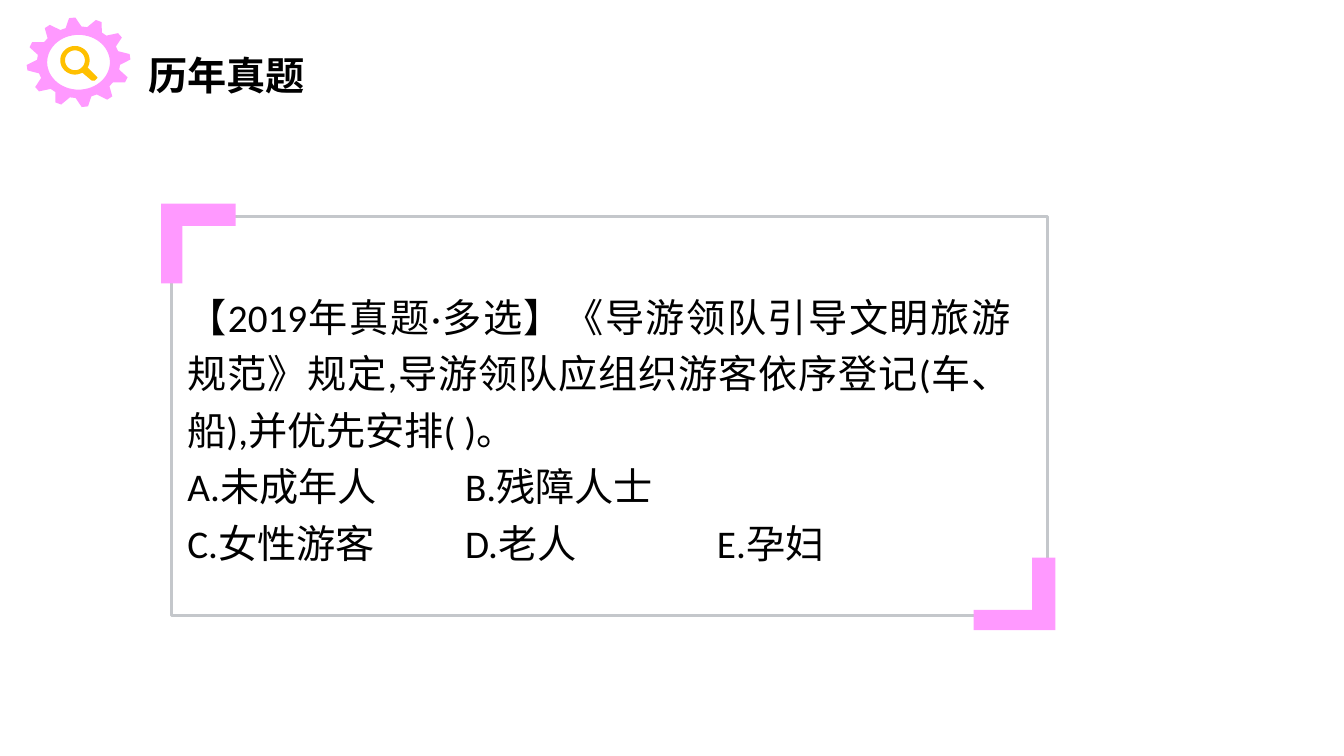
from math import cos, radians, sin

from lxml import etree
from pptx import Presentation
from pptx.dml.color import RGBColor
from pptx.enum.shapes import MSO_SHAPE
from pptx.enum.text import MSO_ANCHOR, PP_ALIGN
from pptx.oxml.ns import qn
from pptx.util import Cm, Pt

PINK = RGBColor(0xFF, 0x99, 0xFF)
AMBER = RGBColor(0xFF, 0xC0, 0x00)
GREY = RGBColor(0xC4, 0xC7, 0xCB)
WHITE = RGBColor(0xFF, 0xFF, 0xFF)
BLACK = RGBColor(0x00, 0x00, 0x00)
LATIN, CJK = "Calibri", "Noto Sans CJK SC"

TITLE = "历年真题"
QUESTION = [
    "【2019年真题·多选】《导游领队引导文眀旅游规范》规定,导游领队应组织游客依序登记(车、船),并优先安排( )。",
    "A.未成年人\tB.残障人士",
    "C.女性游客\tD.老人\tE.孕妇",
]
OPTION_TABS = (7, 13.35)

# Lengths in centimetres: left, top, width, height
TITLE_BOX = (3.73, 1.08, 5.92, 1.63)
FRAME = (4.32, 5.45, 22.07, 10.06)
QUESTION_BOX = (4.72, 7.15, 20.75, 7.19)
# Outer corner, far ends, inner corner
BRACKETS = [
    ((4.06, 5.13), (5.94, 7.14), (4.6, 5.69)),
    ((26.6, 15.88), (24.54, 14.05), (26.01, 15.37)),
]
GEAR_CENTRE, GEAR_RADII, GEAR_HOLE = (1.98, 1.57), (1.31, 1.13), (0.79, 0.69)
TEETH, FIRST_TOOTH = 12, -97
TOOTH = [(-11, 0.8), (-3.5, 1), (3.5, 1), (11, 0.8)]  # angle offset, radius share
LENS_CENTRE, LENS_RADII, LENS_HOLE = (1.89, 1.52), (0.37, 0.36), (0.25, 0.25)
HANDLE = [(2.31, 2.03), (2.39, 2.03), (2.46, 1.96), (2.44, 1.93)]


def box(lengths):
    return [Cm(v) for v in lengths]


def on_ellipse(centre, radii, angle, share=1):
    a = radians(angle)
    return (centre[0] + radii[0] * share * cos(a),
            centre[1] + radii[1] * share * sin(a))


def ellipse(centre, radii):
    return [on_ellipse(centre, radii, a) for a in range(0, 360, 6)]


def add_outline(slide, colour, *contours):
    """Fill one freeform; later contours cut holes in the first."""
    first, *holes = [[box(point) for point in c] for c in contours]
    builder = slide.shapes.build_freeform(*first[0])
    builder.add_line_segments(first[1:])
    for hole in holes:
        builder.move_to(*hole[0])
        builder.add_line_segments(hole[1:])
    sp = builder.convert_to_shape()
    sp.shadow.inherit = False
    sp.fill.solid()
    sp.fill.fore_color.rgb = colour
    sp.line.fill.background()


def write(p, text, font=LATIN, bold=False):
    r = p.add_run()
    r.text = text
    r.font.size = Pt(28)
    r.font.name = font
    r.font.bold = bold
    r.font.color.rgb = BLACK
    etree.SubElement(r.font._element, qn("a:ea"), typeface=CJK)


def prepare(sp, anchor):
    tf = sp.text_frame
    tf.word_wrap = True
    tf.vertical_anchor = anchor
    tf.margin_left = tf.margin_right = tf.margin_top = tf.margin_bottom = 0
    return tf


def add_tabs(p, stops):
    tabs = etree.SubElement(p._p.get_or_add_pPr(), qn("a:tabLst"))
    for stop in stops:
        etree.SubElement(tabs, qn("a:tab"), pos=str(Cm(stop)), algn="l")


def main():
    prs = Presentation()
    prs.slide_width, prs.slide_height = Cm(33.87), Cm(19.05)
    slide = prs.slides.add_slide(prs.slide_layouts[5])

    title = slide.shapes.title
    title.left, title.top, title.width, title.height = box(TITLE_BOX)
    p = prepare(title, MSO_ANCHOR.MIDDLE).paragraphs[0]
    p.alignment = PP_ALIGN.LEFT
    write(p, TITLE, CJK, bold=True)

    gear = [on_ellipse(GEAR_CENTRE, GEAR_RADII,
                       FIRST_TOOTH + i * 360 / TEETH + offset, share)
            for i in range(TEETH) for offset, share in TOOTH]
    add_outline(slide, PINK, gear, ellipse(GEAR_CENTRE, GEAR_HOLE)[::-1])
    rim = [on_ellipse(LENS_CENTRE, LENS_RADII, a) for a in range(30, -302, -6)]
    add_outline(slide, AMBER, rim + HANDLE, ellipse(LENS_CENTRE, LENS_HOLE))

    frame = slide.shapes.add_shape(MSO_SHAPE.RECTANGLE, *box(FRAME))
    frame.shadow.inherit = False
    frame.fill.solid()
    frame.fill.fore_color.rgb = WHITE
    frame.line.color.rgb = GREY
    frame.line.width = Pt(2)

    for (cx, cy), (fx, fy), (ix, iy) in BRACKETS:
        add_outline(slide, PINK, [(cx, cy), (fx, cy), (fx, iy),
                                  (ix, iy), (ix, fy), (cx, fy)])

    tf = prepare(slide.shapes.add_textbox(*box(QUESTION_BOX)), MSO_ANCHOR.TOP)
    for i, line in enumerate(QUESTION):
        p = tf.add_paragraph() if i else tf.paragraphs[0]
        p.alignment = PP_ALIGN.LEFT if i else PP_ALIGN.JUSTIFY
        p.line_spacing = 1.2
        if i:
            add_tabs(p, OPTION_TABS)
        write(p, line)

    prs.save("out.pptx")


if __name__ == "__main__":
    main()
